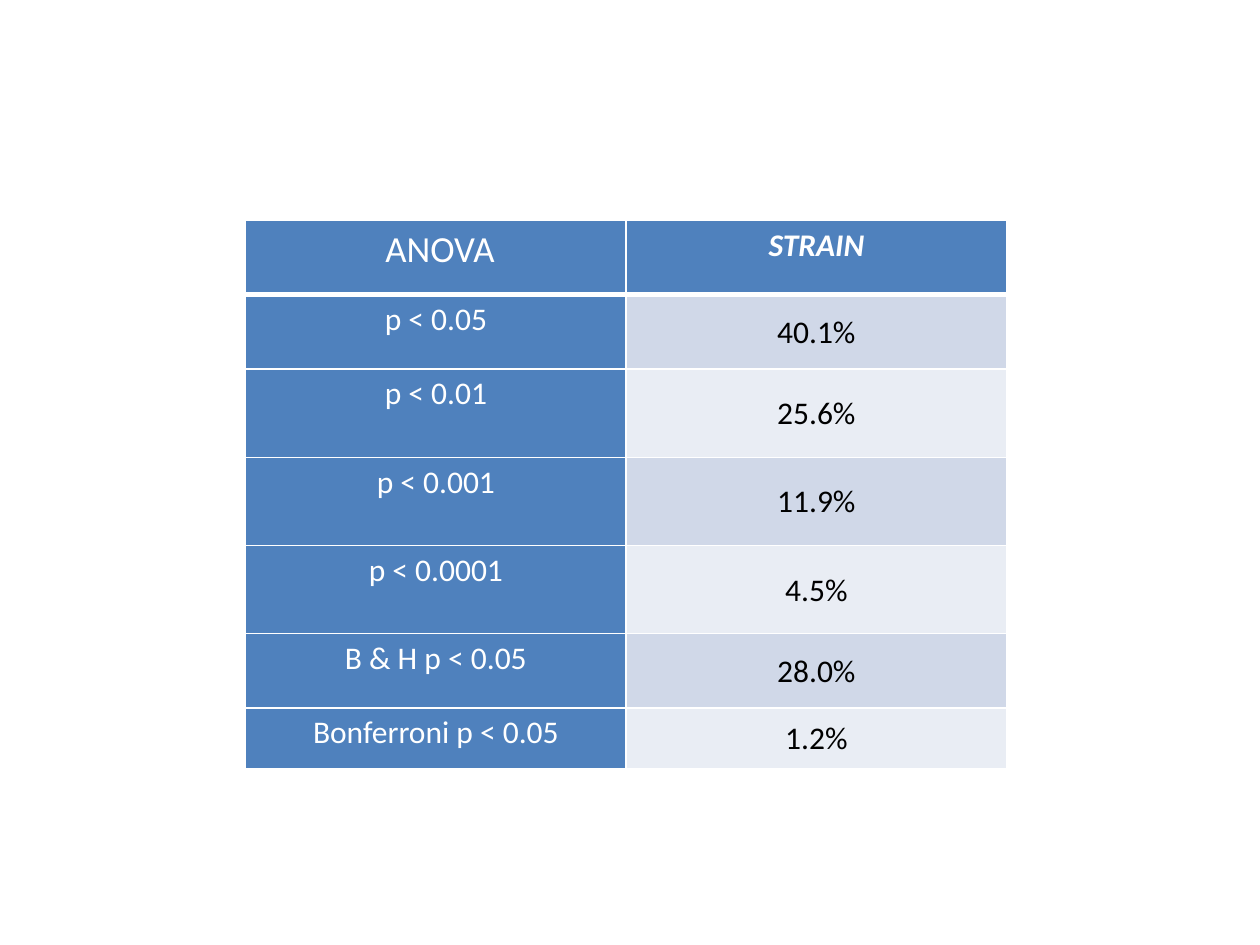
from dataclasses import dataclass

from lxml.etree import SubElement
from pptx import Presentation
from pptx.dml.color import RGBColor
from pptx.enum.text import MSO_ANCHOR as Anchor, PP_ALIGN as Align
from pptx.oxml.ns import qn
from pptx.util import Inches, Pt

RESULTS = [
    ("p < 0.05", "40.1%"),
    ("p < 0.01", "25.6%"),
    ("p < 0.001", "11.9%"),
    ("p < 0.0001", "4.5%"),
    ("B & H p < 0.05", "28.0%"),
    ("Bonferroni p < 0.05", "1.2%"),
]
ROW_HEIGHTS = [0.59, 0.59, 0.7, 0.7, 0.7, 0.59, 0.48]
COLUMN_WIDTH = 3.02


def rgb(hex_color):
    return RGBColor.from_string(hex_color)


@dataclass
class SlideWriter:
    slide: object
    font: str = "Calibri"
    accent: str = "4F81BD"
    light: str = "FFFFFF"
    dark: str = "000000"
    bands: tuple = ("D0D8E8", "E9EDF4")

    def table(self, left, top, column_widths, row_heights):
        frame = self.slide.shapes.add_table(
            len(row_heights), len(column_widths), Inches(left), Inches(top),
            Inches(sum(column_widths)), Inches(sum(row_heights)))
        grid = frame.table
        grid.first_row = grid.horz_banding = False
        for column, width in zip(grid.columns, column_widths):
            column.width = Inches(width)
        for row, height in zip(grid.rows, row_heights):
            row.height = Inches(height)
        return grid

    def borders(self, cell, bottom=1):
        properties = cell._tc.get_or_add_tcPr()
        for side, width in (("L", 1), ("R", 1), ("T", 1), ("B", bottom)):
            line = SubElement(properties, qn(f"a:ln{side}"), w=str(Pt(width)))
            fill = SubElement(line, qn("a:solidFill"))
            SubElement(fill, qn("a:srgbClr"), val=self.light)

    def text(self, cell, wording, color, size=18, emphasis=False):
        paragraph = cell.text_frame.paragraphs[0]
        paragraph.text = wording
        paragraph.alignment = Align.CENTER
        font = paragraph.runs[0].font
        font.name, font.size = self.font, Pt(size)
        font.bold = font.italic = emphasis
        font.color.rgb = rgb(color)
        return paragraph

    def fill(self, cell, color):
        cell.fill.solid()
        cell.fill.fore_color.rgb = rgb(color)

    def heading(self, cell, wording, bottom=1, **style):
        """Fill a cell of the header row or the label column."""
        self.borders(cell, bottom)
        self.fill(cell, self.accent)
        cell.margin_left = cell.margin_right = Inches(0.07)
        cell.margin_top = cell.margin_bottom = 0
        cell.vertical_anchor = Anchor.TOP
        self.text(cell, wording, self.light, **style).line_spacing = 1.15

    def value(self, cell, wording, band):
        self.borders(cell)
        self.fill(cell, self.bands[band % 2])
        cell.margin_left = cell.margin_right = cell.margin_top = Inches(0.01)
        cell.margin_bottom = 0
        cell.vertical_anchor = Anchor.MIDDLE
        self.text(cell, wording, self.dark)


def main():
    deck = Presentation()
    deck.slide_width, deck.slide_height = Inches(10), Inches(7.5)
    writer = SlideWriter(deck.slides.add_slide(deck.slide_layouts[6]))

    anova = writer.table(1.95, 1.75, [COLUMN_WIDTH] * 2, ROW_HEIGHTS)
    writer.heading(anova.cell(0, 0), " ANOVA", bottom=3, size=21)
    writer.heading(anova.cell(0, 1), "STRAIN", bottom=3, emphasis=True)
    for index, (threshold, share) in enumerate(RESULTS):
        writer.heading(anova.cell(index + 1, 0), threshold)
        writer.value(anova.cell(index + 1, 1), share, index)

    deck.save("out.pptx")


if __name__ == "__main__":
    main()
